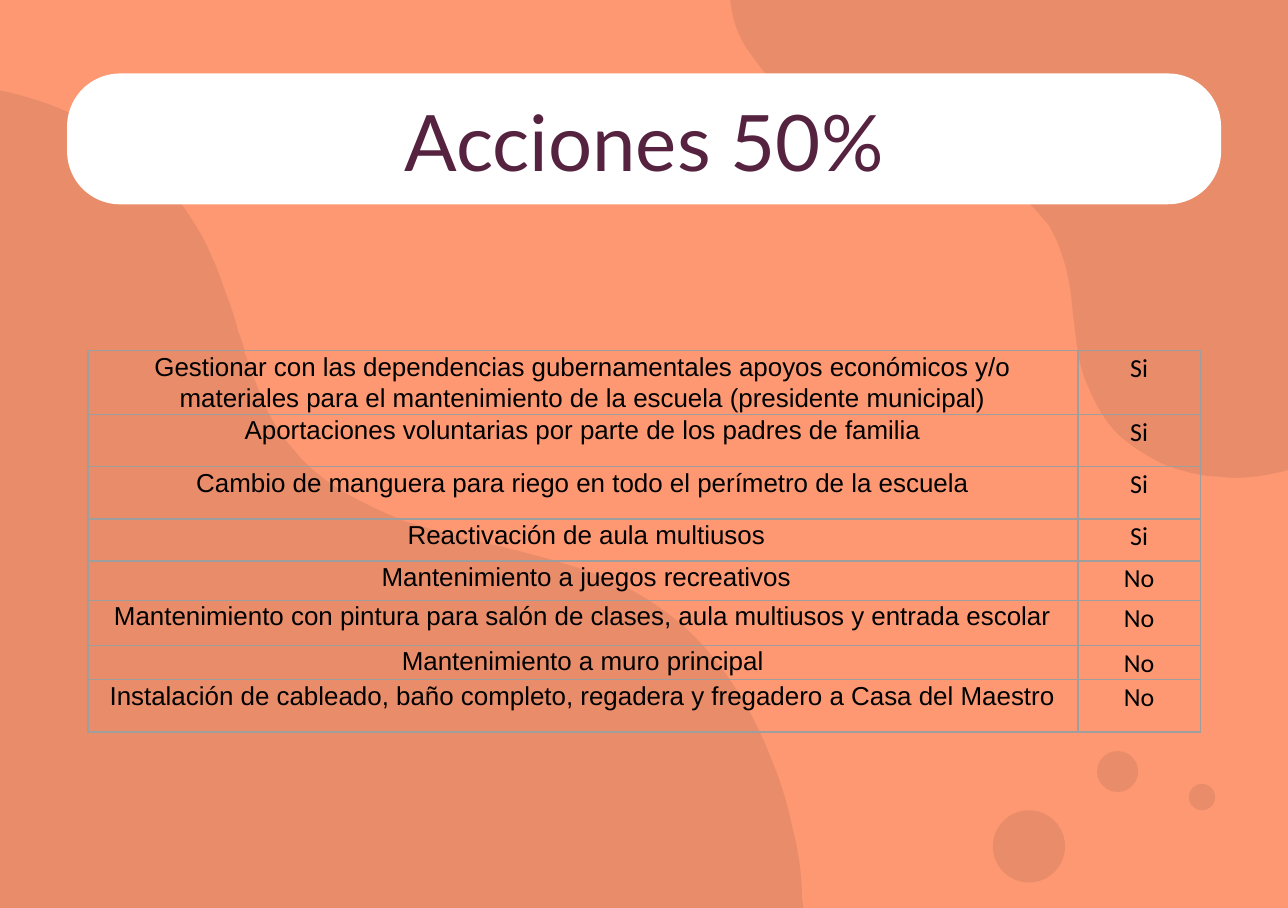
"""Build the slide listing the school actions and whether each was done."""
from lxml.etree import SubElement
from pptx import Presentation
from pptx.dml.color import RGBColor
from pptx.enum.shapes import MSO_SHAPE
from pptx.enum.text import MSO_ANCHOR, MSO_AUTO_SIZE, PP_ALIGN
from pptx.oxml.ns import qn
from pptx.util import Pt

CORAL = RGBColor(0xFD, 0x98, 0x73)
WHITE = RGBColor(0xFF, 0xFF, 0xFF)
BLACK = RGBColor(0, 0, 0)
PLUM = RGBColor(0x55, 0x23, 0x40)
GRAY = RGBColor(0x9E, 0x9E, 0x9E)

WIDTH, HEIGHT = 595.44, 419.76
MARGIN = 40.6
TITLE = "Acciones 50%"
ACTIONS = [
    ("Gestionar con las dependencias gubernamentales apoyos económicos y/o "
     "materiales para el mantenimiento de la escuela (presidente municipal)", "Si", 29.4),
    ("Aportaciones voluntarias por parte de los padres de familia", "Si", 24.2),
    ("Cambio de manguera para riego en todo el perímetro de la escuela", "Si", 24.2),
    (" Reactivación de aula multiusos", "Si", 19.5),
    (" Mantenimiento a juegos recreativos", "No", 18.2),
    ("Mantenimiento con pintura para salón de clases, aula multiusos y entrada escolar",
     "No", 20.8),
    ("Mantenimiento a muro principal", "No", 15.9),
    ("Instalación de cableado, baño completo, regadera y fregadero a Casa del Maestro",
     "No", 24.3),
]
COLUMNS = [(457.8, "Arial"), (56.5, "Calibri")]

BLOBS = [
    ((WIDTH, 0), (WIDTH, 217.4), [
        (586.8, 219.6), (578.9, 221), (570.2, 221),
        (567.4, 221), (564.5, 220.3), (560.9, 220.3),
        (553, 219.6), (545, 217.4), (537.8, 214.6),
        (530.6, 211), (523.4, 206.6), (517, 200.9),
        (511.2, 195.1), (506.9, 187.9), (503.3, 179.3),
        (499.7, 171.4), (498.2, 163.4), (497.5, 156.2),
        (496.8, 152.6), (496.8, 149), (496.1, 145.4),
        (495.4, 136.1), (493.9, 125.3), (490.3, 115.9),
        (488.9, 111.6), (486.7, 107.3), (484.6, 103.7),
        (481.7, 100.8), (479.5, 97.2), (475.9, 94.3),
        (470.2, 90), (463.7, 85.7), (454.3, 81.4),
        (443.5, 76.3), (432, 72.7), (421.2, 68.4),
        (411.8, 65.5), (403.9, 62.6), (396, 59),
        (383.8, 54), (375.1, 49.7), (367.9, 44.6),
        (363.6, 41.8), (359.3, 38.9), (355, 35.3),
        (352.1, 31.7), (349.2, 28.1), (345.6, 23),
        (341.3, 16.6), (338.4, 8.6), (337.7, 0)]),
    ((0, HEIGHT), (371.5, HEIGHT), [
        (371.5, 418.3), (370.8, 416.9), (370.8, 415.4),
        (370.8, 405.4), (369.4, 394.6), (366.5, 383),
        (364.3, 373), (361.4, 362.2), (357.1, 352.1),
        (349.2, 331.2), (338.4, 313.2), (324.7, 298.1),
        (317.5, 290.2), (309.6, 283.7), (299.5, 277.2),
        (291.6, 272.2), (282.2, 267.8), (272.2, 264.2),
        (257.8, 259.2), (243.4, 255.6), (229, 252),
        (215.3, 249.1), (201.6, 245.5), (187.9, 241.2),
        (175, 236.2), (163.4, 230.4), (153.4, 223.9),
        (146.2, 218.9), (140.4, 213.8), (135.4, 207.4),
        (130.3, 201.6), (126, 195.1), (122.4, 187.2),
        (118.8, 178.6), (115.9, 170.6), (113, 162.7),
        (113, 160.6), (111.6, 157), (110.2, 153.4),
        (108.7, 146.9), (106.6, 141.1), (104.4, 135.4),
        (102.2, 129.6), (100.8, 124.6), (98.6, 120.2),
        (96.5, 115.2), (94.3, 110.2), (91.4, 105.8),
        (86.4, 97.2), (79.9, 88.6), (72.7, 80.6),
        (60.5, 68.4), (44.6, 57.6), (28.1, 50.4),
        (19.4, 46.8), (10.1, 43.9), (0, 41.8)]),
]
BUBBLES = [(459, 374.6, 33.4), (507.2, 347.2, 19), (549.6, 362.4, 12.2)]


def paint(sp, color, alpha=None):
    sp.shadow.inherit = False
    sp.fill.solid()
    sp.fill.fore_color.rgb = color
    sp.line.fill.background()
    if alpha:
        clr = sp._element.spPr.find(qn("a:solidFill"))[0]
        SubElement(clr, qn("a:alpha"), val=str(alpha * 1000))


def add_blob(s, corner, start, controls):
    builder = s.shapes.build_freeform(*map(Pt, corner))
    builder.add_line_segments([(Pt(x), Pt(y)) for x, y in [start, *controls]])
    sp = builder.convert_to_shape()
    lines = list(sp._element.iter(qn("a:lnTo")))[1:len(controls) + 1]
    for first, second, third in zip(lines[::3], lines[1::3], lines[2::3]):
        first.tag = qn("a:cubicBezTo")
        for line in (second, third):
            first.append(line[0])
            line.getparent().remove(line)
    paint(sp, BLACK, 8)


def write(tf, text, font, size, color):
    p = tf.paragraphs[0]
    p.alignment = PP_ALIGN.CENTER
    r = p.add_run()
    r.text = text
    r.font.name = font
    r.font.size = Pt(size)
    r.font.color.rgb = color
    return p


def add_borders(cell):
    tcPr = cell._tc.get_or_add_tcPr()
    for side in "LRTB":
        ln = SubElement(tcPr, qn(f"a:ln{side}"), w=str(Pt(0.75)))
        fill = SubElement(ln, qn("a:solidFill"))
        SubElement(fill, qn("a:srgbClr"), val=str(GRAY))


def add_background(s):
    s.background.fill.solid()
    s.background.fill.fore_color.rgb = CORAL
    for blob in BLOBS:
        add_blob(s, *blob)
    for x, y, size in BUBBLES:
        paint(s.shapes.add_shape(MSO_SHAPE.OVAL, Pt(x), Pt(y), Pt(size), Pt(size)), BLACK, 8)


def add_title(s):
    bar = s.shapes.add_shape(MSO_SHAPE.ROUNDED_RECTANGLE, Pt(31), Pt(34), Pt(533.5), Pt(60.5))
    bar.adjustments[0] = 0.405
    paint(bar, WHITE)
    title = s.shapes.title
    bar._element.addnext(title._element)
    title.left, title.top, title.width, title.height = map(Pt, (MARGIN, 36.3, 514.3, 47))
    tf = title.text_frame
    tf.auto_size = MSO_AUTO_SIZE.NONE
    tf.vertical_anchor = MSO_ANCHOR.TOP
    tf.margin_left = tf.margin_right = tf.margin_top = tf.margin_bottom = Pt(7.2)
    write(tf, TITLE, "Lato", 36, PLUM)


def add_actions(s):
    width = sum(w for w, _ in COLUMNS)
    height = sum(h for *_, h in ACTIONS)
    table = s.shapes.add_table(len(ACTIONS), len(COLUMNS), Pt(MARGIN), Pt(162.1),
                               Pt(width), Pt(height)).table
    table.first_row = table.horz_banding = False
    for column, (w, _) in zip(table.columns, COLUMNS):
        column.width = Pt(w)
    for row, (*texts, h) in zip(table.rows, ACTIONS):
        row.height = Pt(h)
        for cell, text, (_, font) in zip(row.cells, texts, COLUMNS):
            cell.margin_left = cell.margin_right = Pt(5)
            cell.margin_top = cell.margin_bottom = Pt(0)
            add_borders(cell)
            cell.fill.background()
            p = write(cell.text_frame, text, font, 12, BLACK)
            p.line_spacing = 1.07
            p.space_after = Pt(8)


def main():
    prs = Presentation()
    prs.slide_width, prs.slide_height = Pt(WIDTH), Pt(HEIGHT)
    s = prs.slides.add_slide(prs.slide_layouts[5])
    add_background(s)
    add_title(s)
    add_actions(s)
    prs.save("out.pptx")


if __name__ == "__main__":
    main()
